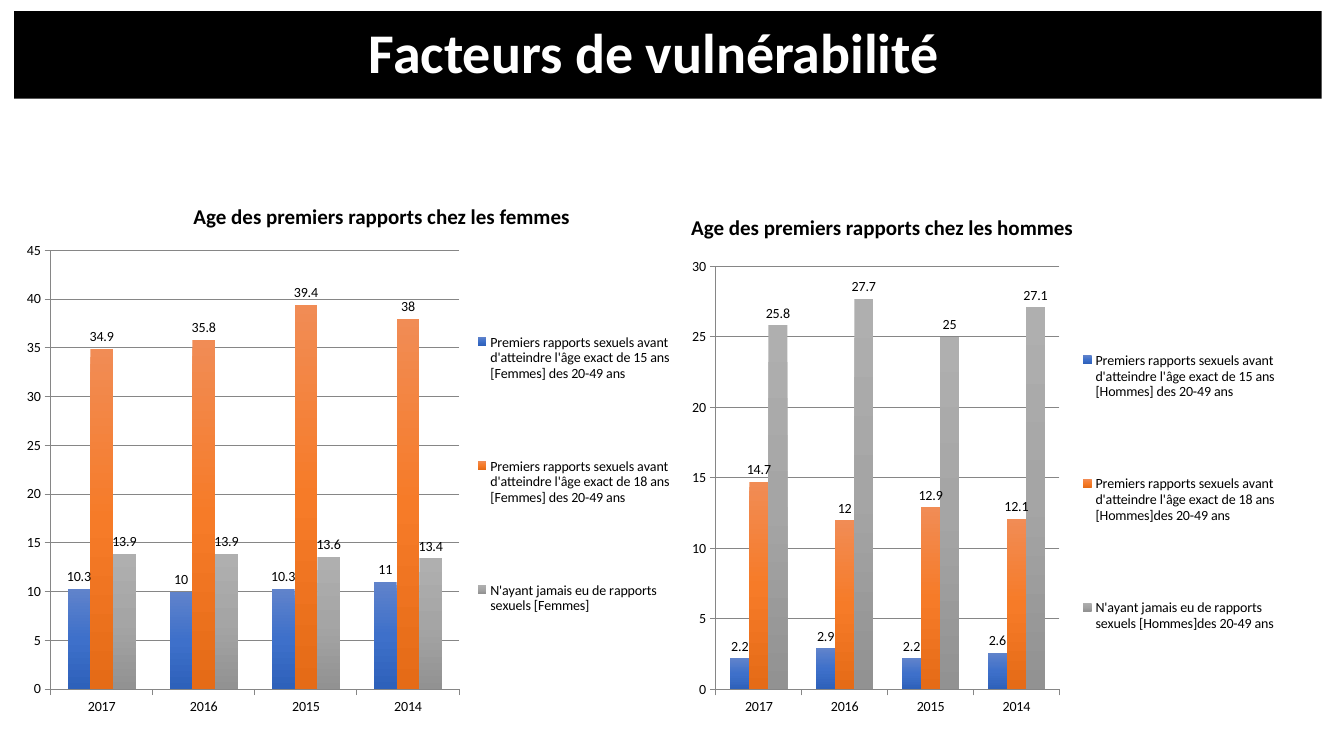
from copy import deepcopy

from lxml import etree
from pptx import Presentation
from pptx.chart.data import CategoryChartData
from pptx.dml.color import RGBColor
from pptx.enum.chart import XL_CHART_TYPE, XL_LABEL_POSITION, XL_LEGEND_POSITION, XL_TICK_MARK
from pptx.enum.text import MSO_ANCHOR, MSO_AUTO_SIZE, PP_ALIGN
from pptx.oxml.ns import qn
from pptx.util import Pt

FONT = "Calibri"
BLACK = "000000"
AXIS_GREY = "868686"
YEARS = ["2017", "2016", "2015", "2014"]
# Top, middle and bottom colour of the columns of each series
GRADIENTS = [
    ("6083CB", "3E70CA", "2E61BA"),
    ("F18C55", "F67B28", "E56B17"),
    ("AFAFAF", "A5A5A5", "929292"),
]
WOMEN = {
    "Premiers rapports sexuels avant d'atteindre l'âge exact de 15 ans [Femmes] des 20-49 ans":
        [10.3, 10, 10.3, 11],
    "Premiers rapports sexuels avant d'atteindre l'âge exact de 18 ans [Femmes] des 20-49 ans":
        [34.9, 35.8, 39.4, 38],
    "N'ayant jamais eu de rapports sexuels [Femmes]": [13.9, 13.9, 13.6, 13.4],
}
MEN = {
    "Premiers rapports sexuels avant d'atteindre l'âge exact de 15 ans [Hommes] des 20-49 ans":
        [2.2, 2.9, 2.2, 2.6],
    "Premiers rapports sexuels avant d'atteindre l'âge exact de 18 ans [Hommes]des 20-49 ans":
        [14.7, 12, 12.9, 12.1],
    "N'ayant jamais eu de rapports sexuels [Hommes]des 20-49 ans": [25.8, 27.7, 25, 27.1],
}


def color(hex_string):
    return RGBColor.from_string(hex_string)


def place(shape, box):
    shape.left, shape.top, shape.width, shape.height = (Pt(length) for length in box)


def write(shape, text, size, hex_string, anchor, alignment, line_spacing):
    frame = shape.text_frame
    frame.text = text
    frame.word_wrap = True
    frame.auto_size = MSO_AUTO_SIZE.NONE
    frame.vertical_anchor = anchor
    paragraph = frame.paragraphs[0]
    paragraph.alignment = alignment
    paragraph.line_spacing = line_spacing
    font = paragraph.font
    font.name, font.size, font.bold = FONT, Pt(size), True
    font.color.rgb = color(hex_string)


def add_title_band(title, box):
    place(title, box)
    title.fill.solid()
    title.fill.fore_color.rgb = color(BLACK)
    write(title, "Facteurs de vulnérabilité", 40, "FFFFFF", MSO_ANCHOR.MIDDLE, PP_ALIGN.CENTER, 0.9)
    title.text_frame.margin_right = Pt(27)


def set_layout(element, position, inner=False):
    """Fix a plot area or legend at x, y, w, h, as fractions of the chart."""
    for old_layout in element.findall(qn("c:layout")):
        element.remove(old_layout)
    layout = etree.Element(qn("c:layout"))
    manual = etree.SubElement(layout, qn("c:manualLayout"))
    settings = [("layoutTarget", "inner")] if inner else []
    settings += [("xMode", "edge"), ("yMode", "edge")]
    settings += zip("xywh", position)
    for name, value in settings:
        etree.SubElement(manual, qn(f"c:{name}")).set("val", str(value))
    element.insert(0 if inner else 1, layout)


def fill_gradient(series, colors):
    fill = series.format.fill
    fill.gradient()
    fill.gradient_angle = 270
    stop_list = series._element.xpath(".//a:gsLst")[0]
    stop_list.insert(1, deepcopy(stop_list[0]))
    for stop, position, hex_string in zip(fill.gradient_stops, (0, 0.5, 1), colors):
        stop.position = position
        stop.color.rgb = color(hex_string)


def format_axis(axis):
    axis.major_tick_mark = XL_TICK_MARK.OUTSIDE
    axis.minor_tick_mark = XL_TICK_MARK.NONE
    axis.format.line.color.rgb = color(AXIS_GREY)


def add_column_chart(slide, box, values_by_name, maximum, plot, legend):
    data = CategoryChartData(number_format="General")
    data.categories = YEARS
    for name, values in values_by_name.items():
        data.add_series(name, values)
    lengths = [Pt(length) for length in box]
    chart = slide.shapes.add_chart(XL_CHART_TYPE.COLUMN_CLUSTERED, *lengths, data).chart
    chart.has_title = False
    chart.font.name, chart.font.size = FONT, Pt(10)
    chart.font.color.rgb = color(BLACK)

    format_axis(chart.category_axis)
    value_axis = chart.value_axis
    format_axis(value_axis)
    value_axis.minimum_scale, value_axis.maximum_scale, value_axis.major_unit = 0, maximum, 5
    value_axis.major_gridlines.format.line.color.rgb = color(AXIS_GREY)

    columns = chart.plots[0]
    columns.gap_width = 150
    columns.overlap = 0
    columns.vary_by_categories = False
    for series, colors in zip(columns.series, GRADIENTS):
        fill_gradient(series, colors)
        series.data_labels.show_value = True
        series.data_labels.position = XL_LABEL_POSITION.OUTSIDE_END

    chart.has_legend = True
    chart.legend.position = XL_LEGEND_POSITION.RIGHT
    chart.legend.include_in_layout = False
    set_layout(chart._chartSpace.xpath(".//c:plotArea")[0], plot, inner=True)
    set_layout(chart.legend._element, legend)


def add_heading(placeholder, box, text):
    place(placeholder, box)
    write(placeholder, text, 15, BLACK, MSO_ANCHOR.BOTTOM, PP_ALIGN.LEFT, 0.7)


def main():
    presentation = Presentation()
    presentation.slide_width, presentation.slide_height = Pt(960), Pt(540)
    comparison_layout = presentation.slide_layouts[4]
    slide = presentation.slides.add_slide(comparison_layout)
    title, women_heading, women_content, men_heading, men_content = slide.placeholders
    for unused in (women_content, men_content):
        unused._element.getparent().remove(unused._element)

    add_title_band(title, (10, 8, 934, 62.5))
    add_heading(women_heading, (131, 137.5, 343, 29), "Age des premiers rapports chez les femmes")
    add_column_chart(slide, (10, 166.5, 476, 351.5), WOMEN, 45,
                     plot=(0.055, 0.035, 0.613, 0.892), legend=(0.685, 0.05, 0.31, 0.88))
    add_heading(men_heading, (486.5, 145.5, 358, 29), "Age des premiers rapports chez les hommes")
    add_column_chart(slide, (486.5, 178, 429, 340), MEN, 30,
                     plot=(0.058, 0.036, 0.572, 0.889), legend=(0.664, 0.057, 0.33, 0.907))
    presentation.save("out.pptx")


if __name__ == "__main__":
    main()
